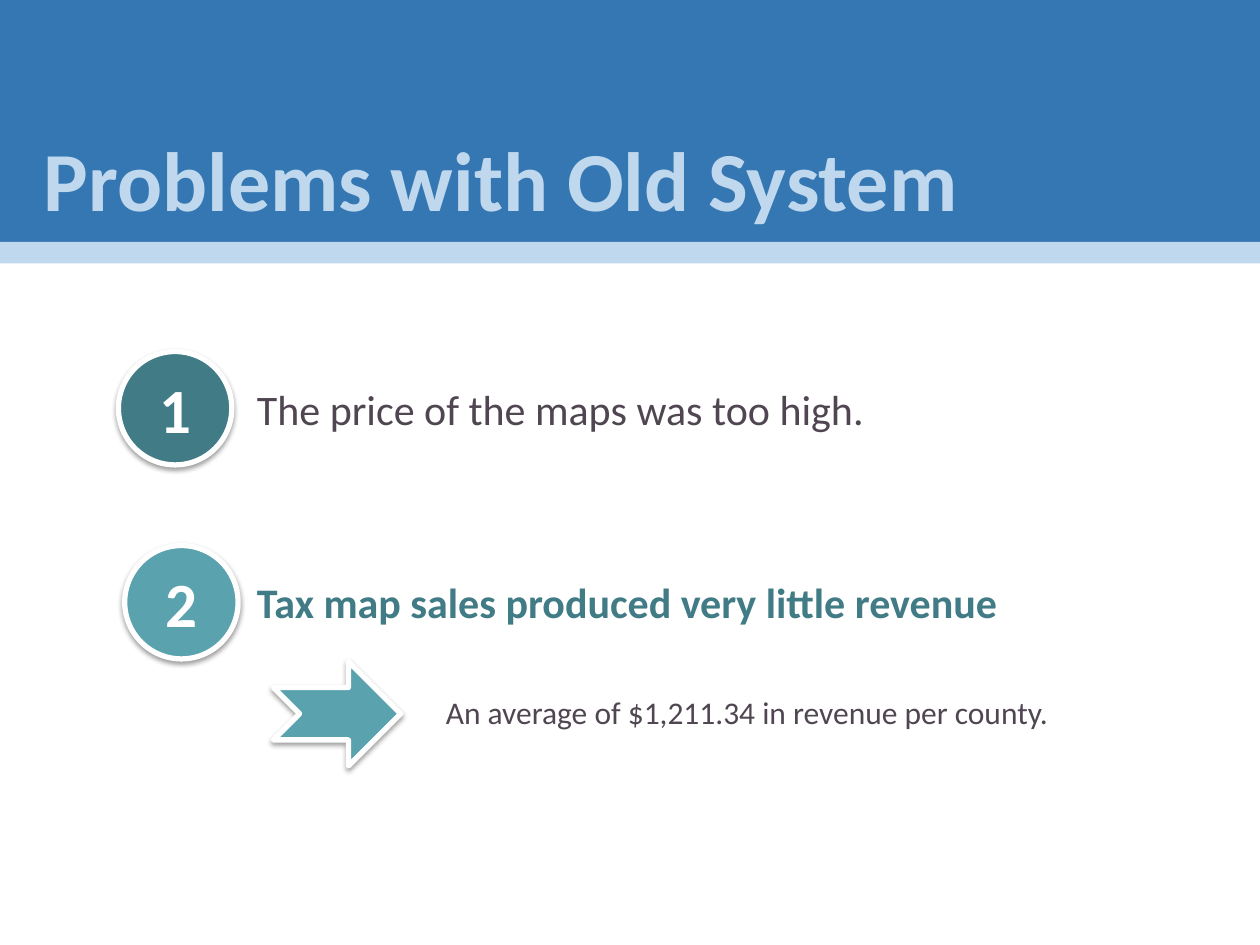
from lxml import etree
from pptx import Presentation
from pptx.dml.color import RGBColor
from pptx.enum.shapes import MSO_SHAPE
from pptx.enum.text import MSO_ANCHOR, PP_ALIGN
from pptx.oxml.ns import nsdecls
from pptx.util import Inches, Pt

RECTANGLE, OVAL = MSO_SHAPE.RECTANGLE, MSO_SHAPE.OVAL
ARROW = MSO_SHAPE.NOTCHED_RIGHT_ARROW
MIDDLE, CENTER = MSO_ANCHOR.MIDDLE, PP_ALIGN.CENTER

BLUE = RGBColor(0x34, 0x77, 0xB2)
PALE_BLUE = RGBColor(0xC0, 0xD8, 0xED)
DARK_TEAL = RGBColor(0x41, 0x7B, 0x85)
TEAL = RGBColor(0x5A, 0xA2, 0xAE)
PLUM = RGBColor(0x50, 0x46, 0x52)
WHITE = RGBColor(0xFF, 0xFF, 0xFF)

COLUMNS, ROWS = 100, 75  # square cells of a tenth of an inch
SHADOW = (
    f'<a:effectLst {nsdecls("a")}>'
    f'<a:outerShdw blurRad="{Pt(3.1)}" dist="{Pt(1.6)}" dir="5400000" rotWithShape="0">'
    '<a:srgbClr val="000000"><a:alpha val="38000"/></a:srgbClr>'
    "</a:outerShdw></a:effectLst>"
)


class SlideBuilder:
    font_name = "Calibri"
    outline_width = Pt(3)

    def __init__(self, deck):
        self.slide = deck.slides.add_slide(deck.slide_layouts[6])
        self.column = deck.slide_width / COLUMNS
        self.row = deck.slide_height / ROWS

    def place(self, left, top, width, height):
        return (round(left * self.column), round(top * self.row),
                round(width * self.column), round(height * self.row))

    def add_words(self, frame, words, size, color, bold=False, **layout):
        paragraph = frame.paragraphs[0]
        for name, value in layout.items():
            setattr(paragraph, name, value)
        run = paragraph.add_run()
        run.text = words
        run.font.color.rgb = color
        for name, value in {"name": self.font_name, "size": Pt(size), "bold": bold}.items():
            setattr(run.font, name, value)

    def text(self, box, words, size, color, **style):
        frame = self.slide.shapes.add_textbox(*self.place(*box)).text_frame
        frame.word_wrap = True
        self.add_words(frame, words, size, color, **style)

    def band(self, box, color, kind=RECTANGLE):
        shape = self.slide.shapes.add_shape(kind, *self.place(*box))
        shape.shadow.inherit = False
        shape.fill.solid()
        shape.fill.fore_color.rgb = color
        shape.line.fill.background()
        return shape

    def raised(self, box, color, kind):
        """White-edged shape with a soft shadow below it."""
        shape = self.band(box, color, kind)
        shape.line.color.rgb = WHITE
        shape.line.width = self.outline_width
        effects = shape._element.spPr.find("{*}effectLst")
        effects.getparent().replace(effects, etree.fromstring(SHADOW))
        return shape

    def badge(self, left, top, number, color):
        frame = self.raised((left, top, 9, 9), color, OVAL).text_frame
        frame.vertical_anchor = MIDDLE
        self.add_words(frame, number, 36, WHITE, bold=True, alignment=CENTER)


def main():
    deck = Presentation()
    deck.slide_width, deck.slide_height = Inches(10), Inches(7.5)
    page = SlideBuilder(deck)

    # Title banner
    page.band((0, 0, COLUMNS, 19.2), BLUE)
    page.band((0, 19.2, COLUMNS, 1.7), PALE_BLUE)
    page.text((2.5, 9.6, 93.3, 9.1), "Problems with Old System", 48, PALE_BLUE, bold=True)

    # First problem
    page.text((19.4, 30.5, 74.1, 4.5), "The price of the maps was too high.", 24, PLUM,
              line_spacing=Pt(25))
    page.badge(9.4, 27.9, "1", DARK_TEAL)

    # Second problem and its detail
    page.badge(9.9, 43.3, "2", TEAL)
    page.text((19.4, 45.3, 65, 5), "Tax map sales produced very little revenue", 24,
              DARK_TEAL, bold=True)
    page.text((34.4, 54.5, 50, 4), "An average of $1,211.34 in revenue per county.", 18, PLUM,
              space_after=Pt(6))
    page.raised((21.7, 52.5, 10.1, 8.3), TEAL, ARROW)

    deck.save("out.pptx")


if __name__ == "__main__":
    main()
